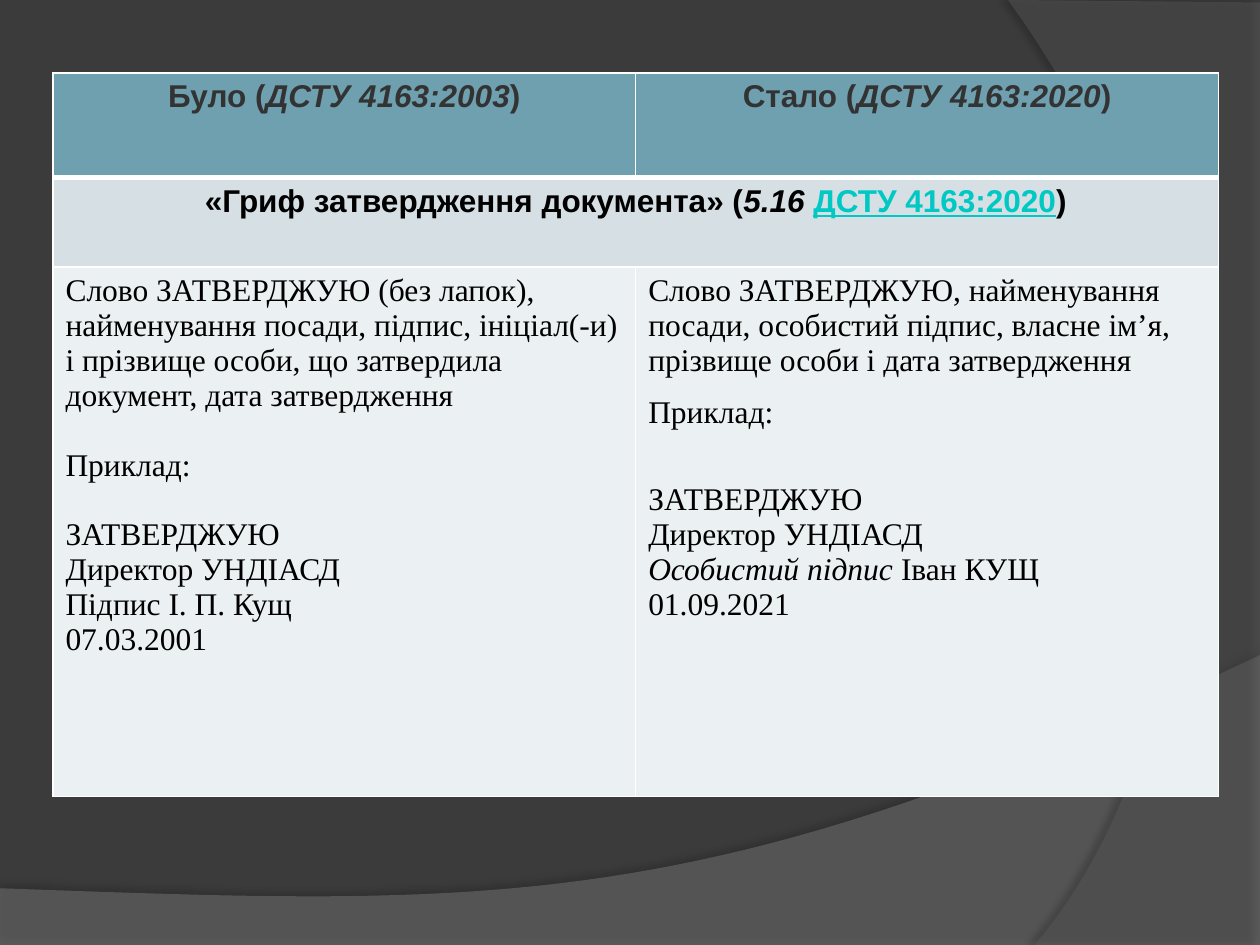
from dataclasses import dataclass, field

from lxml.etree import SubElement
from pptx import Presentation
from pptx.dml.color import RGBColor
from pptx.enum.text import PP_ALIGN
from pptx.oxml import parse_xml
from pptx.oxml.ns import nsdecls, qn
from pptx.util import Inches, Pt


@dataclass(frozen=True)
class Theme:
    back: str = "3B3B3B"
    wave: str = "7F7F7F"
    arc: str = "5E5E5E"
    shade: str = "000000"
    head: str = "6EA0B0"
    band: str = "D5DFE4"
    body: str = "EBF0F2"
    title: str = "333333"
    ink: str = "000000"
    link: str = "00C8C3"
    rule: str = "FFFFFF"
    sans: str = "Arial"
    serif: str = "Times New Roman"
    size: int = 18
    thin: int = 1
    thick: int = 3


@dataclass(frozen=True)
class Bit:
    text: str
    form: dict = field(default_factory=dict)


@dataclass(frozen=True)
class Para:
    bits: list[Bit]
    after: int = 0


@dataclass(frozen=True)
class Curve:
    points: list[tuple[float, float]]
    fill: str
    alpha: int
    shade: int
    dist: float
    angle: int


THEME = Theme()
SLANT = {"italic": True}
HEAD = {"name": THEME.sans, "bold": True, "color": THEME.title}
BAND = HEAD | {"color": THEME.ink}
BODY = {"name": THEME.serif, "bold": False, "color": THEME.ink}


def bezier(a, b, c, d, steps: int = 48) -> list[tuple[float, float]]:
    """Points along a cubic curve, both ends included."""
    return [
        tuple((1 - t) ** 3 * p + 3 * (1 - t) ** 2 * t * q
              + 3 * (1 - t) * t ** 2 * r + t ** 3 * s
              for p, q, r, s in zip(a, b, c, d))
        for t in (n / steps for n in range(steps + 1))
    ]


def draw_curve(slide, curve: Curve) -> None:
    points = [(Inches(x), Inches(y)) for x, y in curve.points]
    pen = slide.shapes.build_freeform(*points[0])
    pen.add_line_segments(points[1:], close=True)
    shape = pen.convert_to_shape()
    shape.line.fill.background()
    shape.fill.solid()
    shape.fill.fore_color.rgb = RGBColor.from_string(curve.fill)
    shape.shadow.inherit = False

    # Transparency and soft shadow
    props = shape._element.spPr
    tint = props.find(qn("a:solidFill"))[0]
    SubElement(tint, qn("a:alpha"), val=str(curve.alpha * 1000))
    props.find(qn("a:effectLst")).append(parse_xml(
        f'<a:outerShdw {nsdecls("a")} blurRad="{Pt(4)}" '
        f'dist="{Pt(curve.dist)}" dir="{curve.angle * 60000}" '
        f'algn="ctr" rotWithShape="0"><a:srgbClr val="{THEME.shade}">'
        f'<a:alpha val="{curve.shade * 1000}"/></a:srgbClr></a:outerShdw>'))


def set_font(font, form: dict) -> None:
    for key, value in form.items():
        if key == "color":
            font.color.rgb = RGBColor.from_string(value)
        else:
            setattr(font, key, value)


def fill_cell(cell, paras: list[Para], form: dict, align: PP_ALIGN) -> None:
    frame = cell.text_frame
    for n, para in enumerate(paras):
        line = frame.add_paragraph() if n else frame.paragraphs[0]
        line.alignment = align
        line.space_after = Pt(para.after)
        for bit in para.bits:
            run = line.add_run()
            run.text = bit.text
            set_font(run.font, {"size": Pt(THEME.size)} | form | bit.form)


def style_cell(cell, fill: str, top: int, base: int) -> None:
    cell.fill.solid()
    cell.fill.fore_color.rgb = RGBColor.from_string(fill)
    props = cell._tc.get_or_add_tcPr()
    sides = {"L": THEME.thin, "R": THEME.thin, "T": top, "B": base}
    for n, (side, width) in enumerate(sides.items()):
        props.insert(n, parse_xml(
            f'<a:ln{side} {nsdecls("a")} w="{Pt(width)}"><a:solidFill>'
            f'<a:srgbClr val="{THEME.rule}"/></a:solidFill></a:ln{side}>'))


def title(word: str, year: int) -> list[Para]:
    return [Para([Bit(f"{word} ("), Bit(f"ДСТУ 4163:{year}", SLANT), Bit(")")])]


def sample(intro: str, sign: list[Bit], date: str,
           gaps: tuple[int, int]) -> list[Para]:
    return [
        Para([Bit(intro)], gaps[0]),
        Para([Bit("Приклад:")], gaps[1]),
        Para([Bit("ЗАТВЕРДЖУЮ")]),
        Para([Bit("Директор УНДІАСД")]),
        Para(sign),
        Para([Bit(date)]),
    ]


CURVES = [
    Curve([(0, 7.5), (10, 7.5),
           *bezier((10, 5.2), (5.59, 7.29), (3.91, 7.19), (0, 7.05))],
          THEME.wave, 45, 35, 3.5, 270),
    Curve([(10, 0.02), (10, 7.5),
           *bezier((8.21, 7.5), (9.35, 6.19), (10.18, 3), (8, 0))],
          THEME.arc, 40, 45, 4, 180),
]

BEFORE = sample(
    "Слово ЗАТВЕРДЖУЮ (без лапок), найменування посади, підпис, ініціал(-и) "
    "і прізвище особи, що затвердила документ, дата затвердження",
    [Bit("Підпис І. П. Кущ")], "07.03.2001", (20, 20))
AFTER = sample(
    "Слово ЗАТВЕРДЖУЮ, найменування посади, особистий підпис, власне ім’я, "
    "прізвище особи і дата затвердження",
    [Bit("Особистий підпис", SLANT), Bit(" Іван КУЩ")], "01.09.2021", (10, 30))
TOPIC = [Para([
    Bit("«Гриф затвердження документа» ("), Bit("5.16 ", SLANT),
    Bit("ДСТУ 4163:2020", {"color": THEME.link, "underline": True}), Bit(")")])]

# Height, fill, font, alignment, top and base rule, cell texts
ROWS = [
    (0.83, THEME.head, HEAD, PP_ALIGN.CENTER, THEME.thin, THEME.thick,
     [title("Було", 2003), title("Стало", 2020)]),
    (0.71, THEME.band, BAND, PP_ALIGN.CENTER, THEME.thick, THEME.thin, [TOPIC]),
    (4.2, THEME.body, BODY, PP_ALIGN.LEFT, THEME.thin, THEME.thin,
     [BEFORE, AFTER]),
]


def draw_table(slide) -> None:
    table = slide.shapes.add_table(
        len(ROWS), 2, Inches(0.42), Inches(0.58),
        Inches(9.25), Inches(5.74)).table
    table.horz_banding = False
    for r, (high, fill, form, align, top, base, texts) in enumerate(ROWS):
        table.rows[r].height = Inches(high)
        for c in range(2):
            style_cell(table.cell(r, c), fill, top, base)
        if len(texts) == 1:
            table.cell(r, 0).merge(table.cell(r, 1))
        for c, paras in enumerate(texts):
            fill_cell(table.cell(r, c), paras, form, align)


def main() -> None:
    deck = Presentation()
    deck.slide_width, deck.slide_height = Inches(10), Inches(7.5)
    slide = deck.slides.add_slide(deck.slide_layouts[6])

    # Backdrop
    slide.background.fill.solid()
    slide.background.fill.fore_color.rgb = RGBColor.from_string(THEME.back)
    for curve in CURVES:
        draw_curve(slide, curve)

    # Comparison of the two standards
    draw_table(slide)
    deck.save("out.pptx")


if __name__ == "__main__":
    main()
